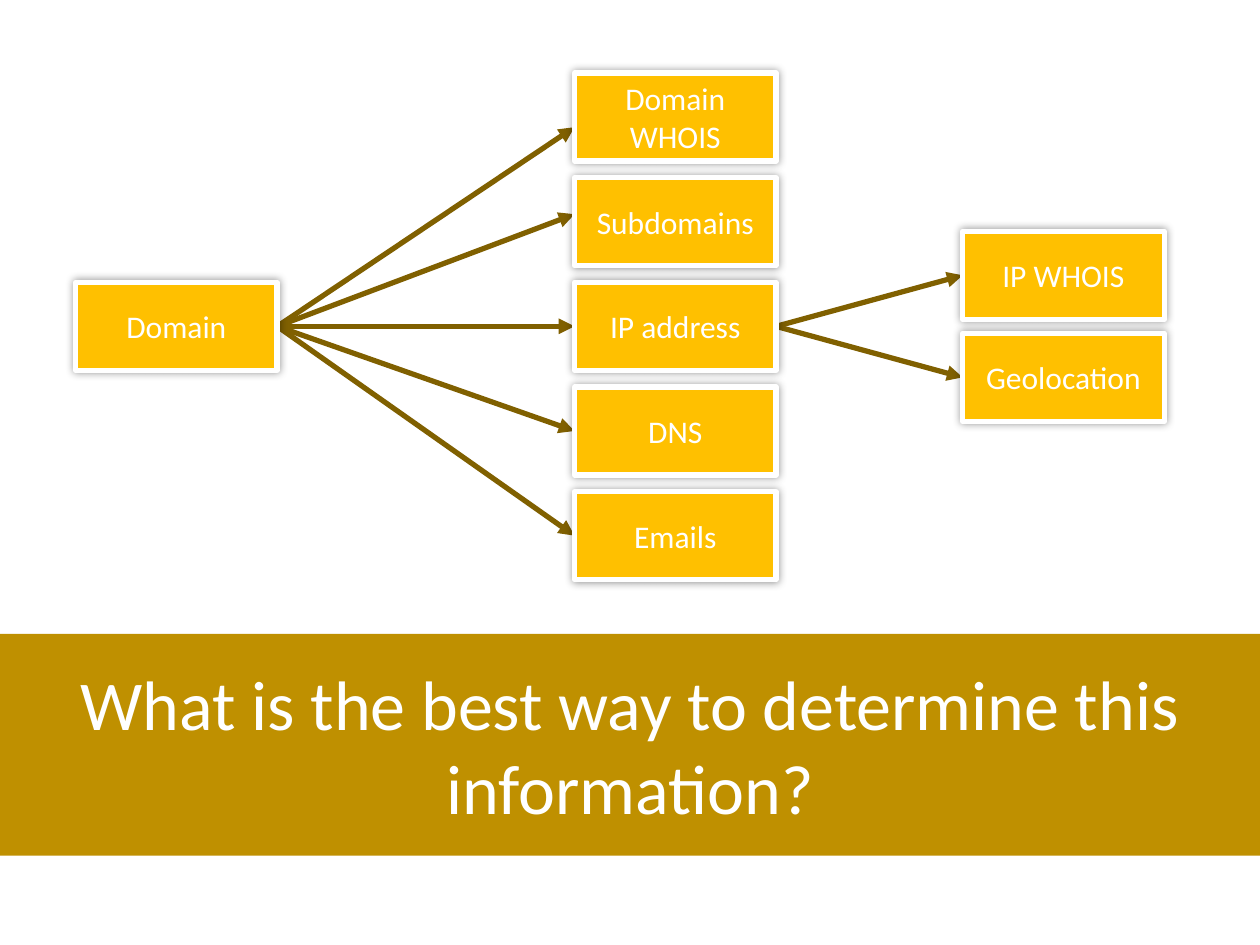
from lxml import etree
from pptx import Presentation
from pptx.dml.color import RGBColor
from pptx.enum import shapes, text
from pptx.oxml import parse_xml
from pptx.oxml.ns import nsdecls, qn
from pptx.util import Pt

# Content: each column lists (label, vertical shift of the arrow tip)
QUESTION = "What is the best way to determine this information?"
COLUMNS = [
    {"left": 43.2, "pitch": 0, "nodes": [("Domain", 0)]},
    {"left": 328.3, "pitch": 59.8, "nodes": [
        ("Domain WHOIS", 5.8), ("Subdomains", -4.3), ("IP address", 0),
        ("DNS", 0), ("Emails", 0)]},
    {"left": 550.1, "pitch": 58.3, "nodes": [("IP WHOIS", 0), ("Geolocation", 0)]},
]
AXIS = 186.5
NODE_WIDTH, NODE_HEIGHT = 115.2, 50.4
BANNER = (0, 362.2, 720, 126.7)

THEME = {
    "font": "Calibri",
    "node": RGBColor.from_string("FFC000"),
    "banner": RGBColor.from_string("BF9000"),
    "arrow": RGBColor.from_string("806000"),
    "white": RGBColor.from_string("FFFFFF"),
    "question_size": 40,
    "node_size": 18,
    "line_width": 3,
}


def write(shape, wording, size):
    frame = shape.text_frame
    frame.word_wrap = True
    frame.auto_size = text.MSO_AUTO_SIZE.NONE
    frame.vertical_anchor = text.MSO_ANCHOR.MIDDLE
    paragraph = frame.paragraphs[0]
    paragraph.alignment = text.PP_ALIGN.CENTER
    run = paragraph.add_run()
    run.text = wording
    run.font.name = THEME["font"]
    run.font.size = Pt(size)
    run.font.color.rgb = THEME["white"]


def fill(shape, color):
    shape.fill.solid()
    shape.fill.fore_color.rgb = color


def add_arrow(slide, start, end):
    arrow = slide.shapes.add_connector(
        shapes.MSO_CONNECTOR.STRAIGHT, *(Pt(value) for value in start + end))
    arrow.line.color.rgb = THEME["arrow"]
    arrow.line.width = Pt(THEME["line_width"])
    etree.SubElement(arrow.line._get_or_add_ln(), qn("a:tailEnd"), type="triangle")
    etree.SubElement(arrow._element.spPr, qn("a:effectLst"))


def add_node(slide, left, middle, label):
    node = slide.shapes.add_shape(
        shapes.MSO_SHAPE.RECTANGLE, Pt(left), Pt(middle - NODE_HEIGHT / 2),
        Pt(NODE_WIDTH), Pt(NODE_HEIGHT))
    fill(node, THEME["node"])
    node.line.color.rgb = THEME["white"]
    node.line.width = Pt(THEME["line_width"])
    # Soft shadow all round
    node.shadow.inherit = False
    node._element.spPr.find(qn("a:effectLst")).append(parse_xml(
        f'<a:outerShdw {nsdecls("a")} blurRad="{Pt(5)}" algn="ctr" rotWithShape="0">'
        '<a:srgbClr val="000000"><a:alpha val="40000"/></a:srgbClr></a:outerShdw>'))
    write(node, label, THEME["node_size"])


def middles(column):
    count = len(column["nodes"])
    return [AXIS + (row - (count - 1) / 2) * column["pitch"] for row in range(count)]


def main():
    presentation = Presentation()
    presentation.slide_width, presentation.slide_height = Pt(720), Pt(540)
    slide = presentation.slides.add_slide(presentation.slide_layouts[5])

    # Question banner
    banner = slide.shapes.title
    banner.left, banner.top, banner.width, banner.height = (Pt(v) for v in BANNER)
    fill(banner, THEME["banner"])
    write(banner, QUESTION, THEME["question_size"])

    # Arrows from the middle node of each column to every node of the next
    for source, target in zip(COLUMNS, COLUMNS[1:]):
        start = (source["left"] + NODE_WIDTH, AXIS)
        for (_, shift), middle in zip(target["nodes"], middles(target)):
            add_arrow(slide, start, (target["left"], middle + shift))

    # Nodes
    for column in COLUMNS:
        for (label, _), middle in zip(column["nodes"], middles(column)):
            add_node(slide, column["left"], middle, label)

    presentation.save("out.pptx")


if __name__ == "__main__":
    main()
